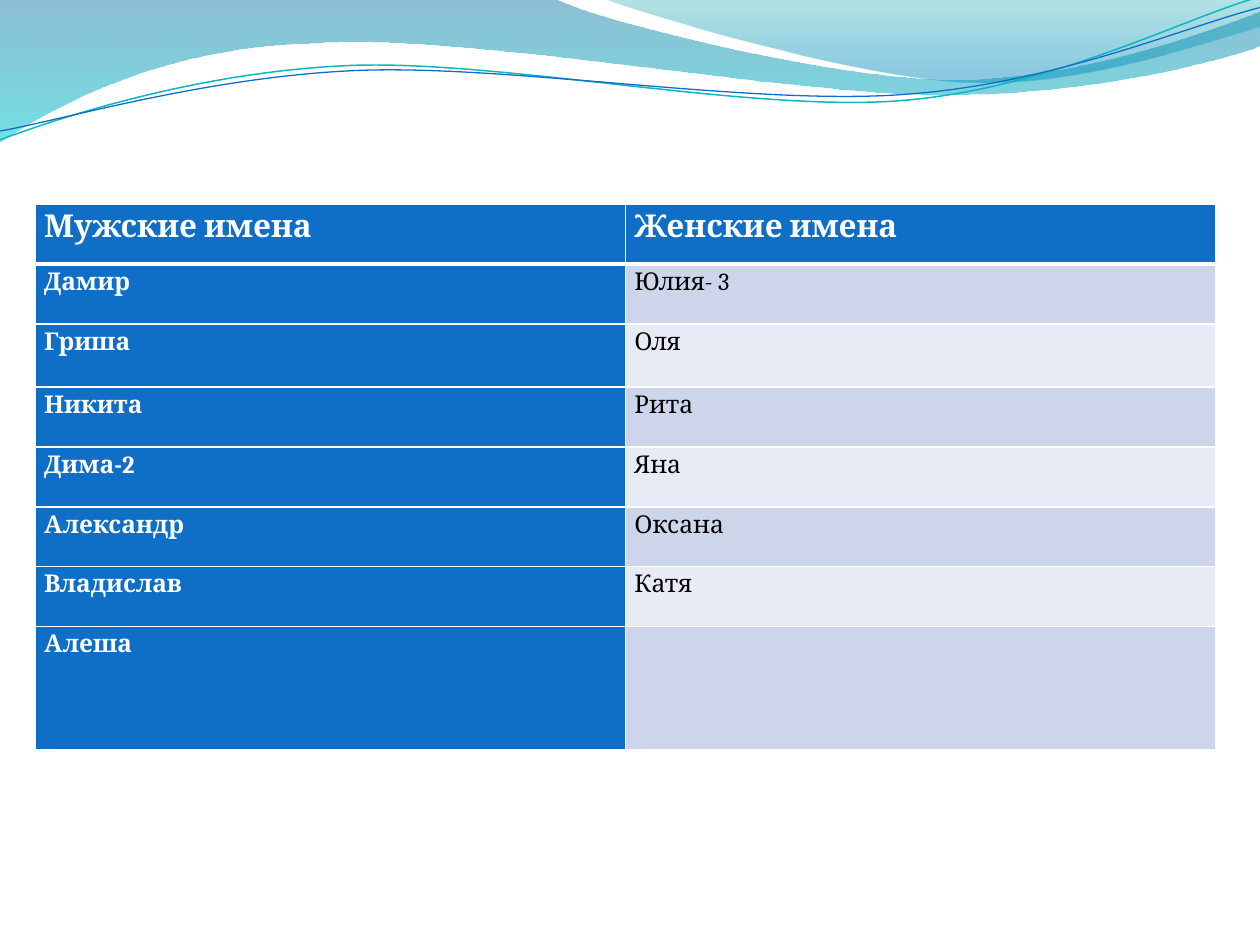
import math

from lxml import etree
from pptx import Presentation, util as u
from pptx.dml.color import RGBColor
from pptx.enum import text
from pptx.oxml.ns import qn

HEAD = ("Мужские имена", "Женские имена")
NAMES = [
    ("Дамир", "Юлия- 3"),
    ("Гриша", "Оля"),
    ("Никита", "Рита"),
    ("Дима-2", "Яна"),
    ("Александр", "Оксана"),
    ("Владислав", "Катя"),
    ("Алеша", ""),
]
SHARES = (1, 1, 1.05, 1, 1, 1, 1, 2.05)
GRID = dict(left=0.28, top=1.62, wide=9.37, high=4.33)
THEME = dict(
    font="Cambria", big=18, small=14, blue="0F6FC6", white="FFFFFF",
    black="000000", bands=("CCD5EA", "E7EBF5"), rule=1, thick=3,
)
TILT = -2.7
WAVES = [
    dict(
        start=(0, 0),
        steps=[
            (4.4, -0.01),
            (4.76, 0.17, 6.64, 0.63, 7.58, 0.63),
            (8.53, 0.63, 9.58, 0.26, 10, 0.09),
            (10.01, 0.36),
            (9.83, 0.44, 8.7, 0.76, 7.46, 0.75),
            (6.22, 0.75, 3.82, 0.28, 2.57, 0.34),
            (1.29, 0.36, 0.46, 0.83, -0.01, 1.13),
        ],
        stops=[(0, "0074A1", 45), (1, "00C6CF", 55)],
    ),
    dict(
        start=(4.79, -0.01),
        steps=[
            (5.09, 0.11, 6.82, 0.62, 7.69, 0.65),
            (8.56, 0.69, 9.61, 0.32, 10, 0.21),
            (10, 0),
        ],
        stops=[(0, "00A1A9", 30), (0.8, "008BBF", 45)],
    ),
    dict(
        start=(0, 1.11),
        steps=[
            (0.48, 0.93, 1.58, 0.57, 2.77, 0.52),
            (3.95, 0.47, 5.93, 0.89, 7.13, 0.8),
            (8.33, 0.71, 9.38, 0.15, 9.98, -0.02),
        ],
        line=("0AB8BF", 0.85), pivot=(4.99, 0.58),
    ),
    dict(
        start=(0, 1.04),
        steps=[
            (0.47, 0.96, 1.64, 0.61, 2.83, 0.56),
            (4.03, 0.51, 5.97, 0.84, 7.17, 0.75),
            (8.36, 0.67, 9.41, 0.21, 10, 0.06),
        ],
        line=("0F6FC6", 0.75), pivot=(5, 0.59),
    ),
]


def rgb(code):
    return RGBColor.from_string(code)


def turn(dot, pivot):
    angle = math.radians(-TILT)
    x, y = dot[0] - pivot[0], dot[1] - pivot[1]
    return (
        pivot[0] + x * math.cos(angle) - y * math.sin(angle),
        pivot[1] + x * math.sin(angle) + y * math.cos(angle),
    )


def bend(shape, steps):
    route = next(shape.element.iter(qn("a:path")))
    lines = iter(route.findall(qn("a:lnTo")))
    for step in steps:
        first = next(lines)
        if len(step) == 2:
            continue
        curve = etree.Element(qn("a:cubicBezTo"))
        route.replace(first, curve)
        curve.append(first[0])
        for _ in range(2):
            line = next(lines)
            curve.append(line[0])
            route.remove(line)


def wave(slide, start, steps, stops=None, line=None, pivot=None):
    dots = [start] + [step[i:i + 2] for step in steps for i in range(0, len(step), 2)]
    if pivot:
        dots = [turn(dot, pivot) for dot in dots]
    dots = [(u.Inches(x), u.Inches(y)) for x, y in dots]
    pen = slide.shapes.build_freeform(*dots[0])
    pen.add_line_segments(dots[1:], close=bool(stops))
    shape = pen.convert_to_shape()
    bend(shape, steps)
    shape.shadow.inherit = False
    if line:
        shape.rotation = TILT
        shape.fill.background()
        shape.line.color.rgb = rgb(line[0])
        shape.line.width = u.Pt(line[1])
        return
    shape.line.fill.background()
    shape.fill.gradient()
    shape.fill.gradient_angle = 270
    for stop, (place, color, alpha) in zip(shape.fill.gradient_stops, stops):
        stop.position = place
        stop.color.rgb = rgb(color)
    tints = shape.element.spPr.find(qn("a:gradFill")).iter(qn("a:srgbClr"))
    for tint, (place, color, alpha) in zip(tints, stops):
        etree.SubElement(tint, qn("a:alpha"), val=str(alpha * 1000))


def write(frame, words, size, color, bold=False):
    para = frame.paragraphs[0]
    para.alignment = text.PP_ALIGN.JUSTIFY
    para.line_spacing = 1.15
    run = para.add_run()
    run.text = words
    run.font.name = THEME["font"]
    run.font.size = u.Pt(size)
    run.font.bold = bold
    run.font.color.rgb = rgb(color)


def edge(cell, side, width):
    props = cell._tc.get_or_add_tcPr()
    line = etree.SubElement(props, qn(f"a:ln{side}"), w=str(u.Pt(width)))
    fill = etree.SubElement(line, qn("a:solidFill"))
    etree.SubElement(fill, qn("a:srgbClr"), val=THEME["white"])


def fill_cell(cell, words, row, col):
    cell.margin_left = cell.margin_right = u.Inches(0.07)
    cell.margin_top = cell.margin_bottom = 0
    heavy = {0: "B", 1: "T"}.get(row)
    for side in "LRTB":
        edge(cell, side, THEME["thick"] if side == heavy else THEME["rule"])
    dark = row == 0 or col == 0
    cell.fill.solid()
    cell.fill.fore_color.rgb = rgb(THEME["blue"] if dark else THEME["bands"][(row - 1) % 2])
    if words:
        write(
            cell.text_frame, words, bold=dark,
            size=THEME["small" if row else "big"],
            color=THEME["white" if dark else "black"],
        )


def add_names(slide):
    rows = [HEAD, *NAMES]
    box = [u.Inches(GRID[key]) for key in ("left", "top", "wide", "high")]
    table = slide.shapes.add_table(len(rows), len(HEAD), *box).table
    for col in table.columns:
        col.width = u.Inches(GRID["wide"] / len(HEAD))
    for r, (names, share) in enumerate(zip(rows, SHARES)):
        table.rows[r].height = u.Inches(GRID["high"] * share / sum(SHARES))
        for c, words in enumerate(names):
            fill_cell(table.cell(r, c), words, r, c)


def main():
    deck = Presentation()
    deck.slide_width, deck.slide_height = u.Inches(10), u.Inches(7.5)
    slide = deck.slides.add_slide(deck.slide_layouts[6])
    for item in WAVES:
        wave(slide, **item)
    add_names(slide)
    deck.save("out.pptx")


if __name__ == "__main__":
    main()
